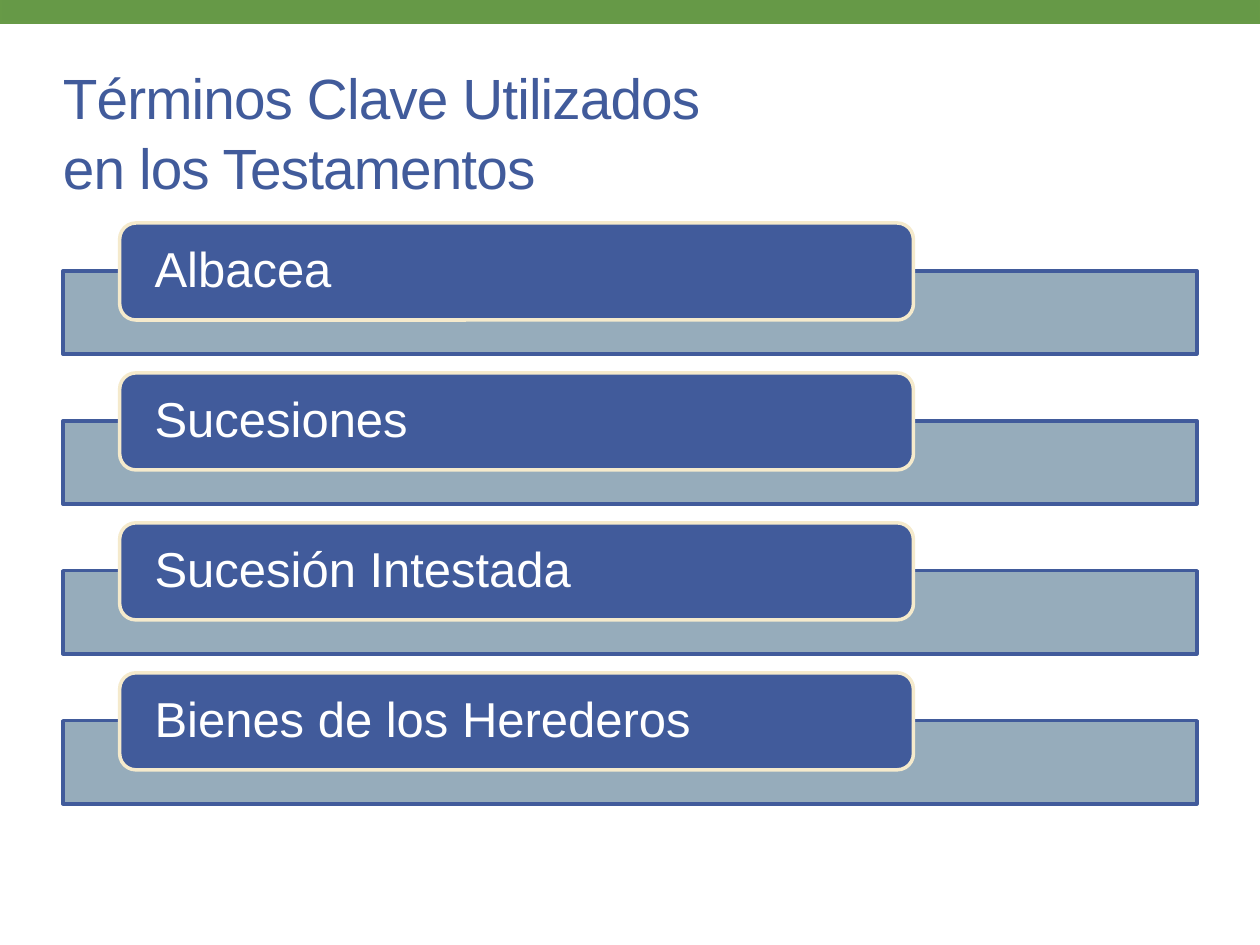
from dataclasses import dataclass

from lxml import etree
from pptx import Presentation
from pptx import util as u
from pptx.dml.color import RGBColor
from pptx.enum import shapes, text
from pptx.oxml import ns


@dataclass(frozen=True)
class Theme:
    font: str = "Arial"
    blue: str = "415B9B"
    steel: str = "8BA4B4"
    cream: str = "F5EACC"
    white: str = "FFFFFF"
    green: str = "669947"
    green_edge: str = "679A47"
    title_size: float = 32.4
    term_size: float = 28
    line_width: float = 2


class SlideBuilder:
    """Draws on one slide, with boxes given as columns and rows of a 20 by 15 grid."""

    COLUMNS, ROWS = 20, 15

    def __init__(self, presentation, theme):
        self.theme = theme
        self.slide = presentation.slides.add_slide(presentation.slide_layouts[6])
        self.column = presentation.slide_width / self.COLUMNS
        self.row = presentation.slide_height / self.ROWS

    def place(self, left, top, width, height):
        return (round(left * self.column), round(top * self.row),
                round(width * self.column), round(height * self.row))

    def panel(self, box, fill, line, kind=shapes.MSO_SHAPE.RECTANGLE, opacity=100):
        shape = self.slide.shapes.add_shape(kind, *self.place(*box))
        shape.shadow.inherit = False
        shape.fill.solid()
        shape.fill.fore_color.rgb = RGBColor.from_string(fill)
        shape.line.color.rgb = RGBColor.from_string(line)
        shape.line.width = u.Pt(self.theme.line_width)
        if opacity < 100:
            color = shape.fill._xPr.find(".//" + ns.qn("a:srgbClr"))
            etree.SubElement(color, ns.qn("a:alpha"), val=str(opacity * 1000))
        return shape

    def add_text(self, shape, lines, size, color, spacing, inset=0, tracking=0):
        """Fill a shape with one left-aligned paragraph, broken into the given lines."""
        frame = shape.text_frame
        frame.word_wrap = True
        frame.vertical_anchor = text.MSO_ANCHOR.MIDDLE
        frame.margin_left = frame.margin_right = u.Inches(inset)
        frame.margin_top = frame.margin_bottom = 0
        paragraph = frame.paragraphs[0]
        paragraph.alignment = text.PP_ALIGN.LEFT
        paragraph.line_spacing = spacing
        for index, line in enumerate(lines):
            if index:
                paragraph.add_line_break()
            run = paragraph.add_run()
            run.text = line
            run.font.name = self.theme.font
            run.font.size = u.Pt(size)
            run.font.color.rgb = RGBColor.from_string(color)
            if tracking:
                run.font._element.set("spc", str(round(tracking * 100)))

    def title(self, box, lines):
        shape = self.slide.shapes.add_textbox(*self.place(*box))
        self.add_text(shape, lines, self.theme.title_size, self.theme.blue,
                      spacing=1.04, tracking=-0.5)

    def term(self, top, label):
        """Draw a wide bar with a rounded label overlapping its upper edge."""
        theme = self.theme
        self.panel((1, top + 0.76, 18, 1.32), theme.steel, theme.blue, opacity=90)
        pill = self.panel((1.9, top, 12.6, 1.54), theme.blue, theme.cream,
                          shapes.MSO_SHAPE.ROUNDED_RECTANGLE)
        self.add_text(pill, [label], theme.term_size, theme.white,
                      spacing=0.9, inset=0.24)


def main():
    presentation = Presentation()
    presentation.slide_width = u.Inches(10)
    presentation.slide_height = u.Inches(7.5)
    theme = Theme()
    builder = SlideBuilder(presentation, theme)

    builder.panel((0, -0.04, 20.02, 0.4), theme.green, theme.green_edge)
    builder.title((1, 1.04, 18, 2.06),
                  ["Términos Clave Utilizados ", "en los Testamentos"])

    first_top, pitch = 3.54, 2.38
    terms = ["Albacea", "Sucesiones", "Sucesión Intestada", "Bienes de los Herederos"]
    for index, label in enumerate(terms):
        builder.term(first_top + index * pitch, label)

    presentation.save("out.pptx")


if __name__ == "__main__":
    main()
